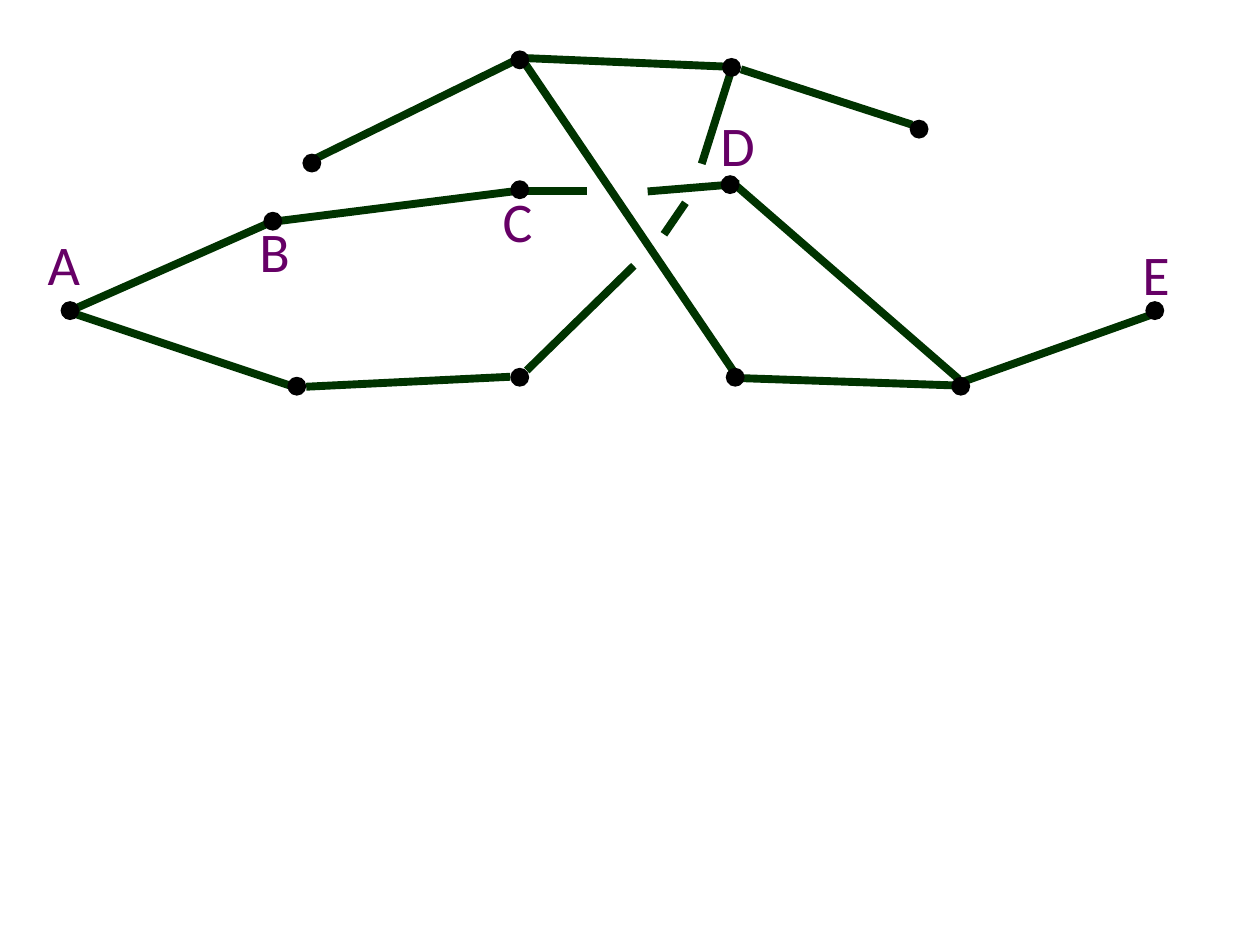
from lxml import etree
from pptx import Presentation
from pptx.dml.color import RGBColor
from pptx.enum.shapes import MSO_CONNECTOR, MSO_SHAPE
from pptx.enum.text import MSO_AUTO_SIZE
from pptx.oxml.ns import qn
from pptx.util import Pt

STRAIGHT = MSO_CONNECTOR.STRAIGHT
OVAL = MSO_SHAPE.OVAL
FIT_SHAPE = MSO_AUTO_SIZE.SHAPE_TO_FIT_TEXT
BLANK_LAYOUT = 6

THEME = {
    "background": RGBColor.from_string("FFFFFF"),
    "strand": RGBColor.from_string("003300"),
    "vertex": RGBColor.from_string("000000"),
    "label": RGBColor.from_string("660066"),
    "font": "Calibri",
    "label_size": 32,
    "strand_width": 4.5,
}
SLIDE_SIZE = (720, 540)
VERTEX_SIZE = 10.8
LABEL_SIZE = (33.8, 46.1)

OVER_STRAND = ((297.4, 32.4), (419.8, 213.1))
STRANDS = [
    ((39.6, 177.8), (155.5, 126.7)),
    ((38.2, 177.8), (167.8, 221)),
    ((174.2, 93.6), (297.4, 33.1)),
    ((156.2, 126.7), (293, 109.4)),
    ((175, 221), (291.6, 215.3)),
    ((297.4, 33.1), (417.6, 38.2)),
    ((297.4, 109.4), (335.5, 109.4)),
    ((370.1, 109.4), (422.6, 105.1)),
    ((301, 211.7), (362.2, 151.9)),
    ((379.4, 133.9), (391.7, 115.9)),
    ((418.3, 38.9), (401, 93.6)),
    ((423.4, 39.6), (521.3, 71.3)),
    ((421.2, 106.6), (547.9, 216.7)),
    ((421.2, 216), (546.5, 220.3)),
    ((550.1, 218.2), (659.5, 179.3)),
]
VERTEX_CENTERS = [
    (40, 177.5), (178.2, 93.2), (169.6, 220.7), (155.9, 126.4),
    (297, 34.2), (297, 108.4), (297, 215.6),
    (418, 38.5), (417.2, 105.5), (420.1, 215.6),
    (549, 220.7), (525.2, 73.8), (659.9, 177.5),
]
LABELS = [
    ("A", 20.2, 127.4),
    ("B", 141.1, 120.2),
    ("C", 280.1, 103),
    ("D", 404.6, 59.8),
    ("E", 645.8, 133.2),
]


def add_strand(shapes, start, end):
    strand = shapes.add_connector(STRAIGHT, *map(Pt, start + end))
    strand.line.color.rgb = THEME["strand"]
    strand.line.width = Pt(THEME["strand_width"])
    etree.SubElement(strand._element.spPr, qn("a:effectLst"))


def add_vertex(shapes, center_x, center_y):
    radius = VERTEX_SIZE / 2
    vertex = shapes.add_shape(OVAL, Pt(center_x - radius), Pt(center_y - radius),
                              Pt(VERTEX_SIZE), Pt(VERTEX_SIZE))
    vertex.shadow.inherit = False
    vertex.fill.solid()
    vertex.fill.fore_color.rgb = THEME["vertex"]
    vertex.line.fill.background()


def add_text(shapes, text, *, left, top, width, height, size, color, font):
    box = shapes.add_textbox(Pt(left), Pt(top), Pt(width), Pt(height))
    frame = box.text_frame
    frame.word_wrap = True
    frame.auto_size = FIT_SHAPE
    run = frame.paragraphs[0].add_run()
    run.text = text
    run.font.size = Pt(size)
    run.font.name = font
    run.font.color.rgb = color


def main():
    presentation = Presentation()
    presentation.slide_width, presentation.slide_height = map(Pt, SLIDE_SIZE)
    slide = presentation.slides.add_slide(presentation.slide_layouts[BLANK_LAYOUT])
    slide.background.fill.solid()
    slide.background.fill.fore_color.rgb = THEME["background"]

    add_strand(slide.shapes, *OVER_STRAND)
    strand_group = slide.shapes.add_group_shape()
    for start, end in STRANDS:
        add_strand(strand_group.shapes, start, end)

    vertex_group = slide.shapes.add_group_shape()
    for center in VERTEX_CENTERS:
        add_vertex(vertex_group.shapes, *center)

    width, height = LABEL_SIZE
    for text, left, top in LABELS:
        add_text(slide.shapes, text, left=left, top=top, width=width, height=height,
                 size=THEME["label_size"], color=THEME["label"], font=THEME["font"])

    presentation.save("out.pptx")


if __name__ == "__main__":
    main()
